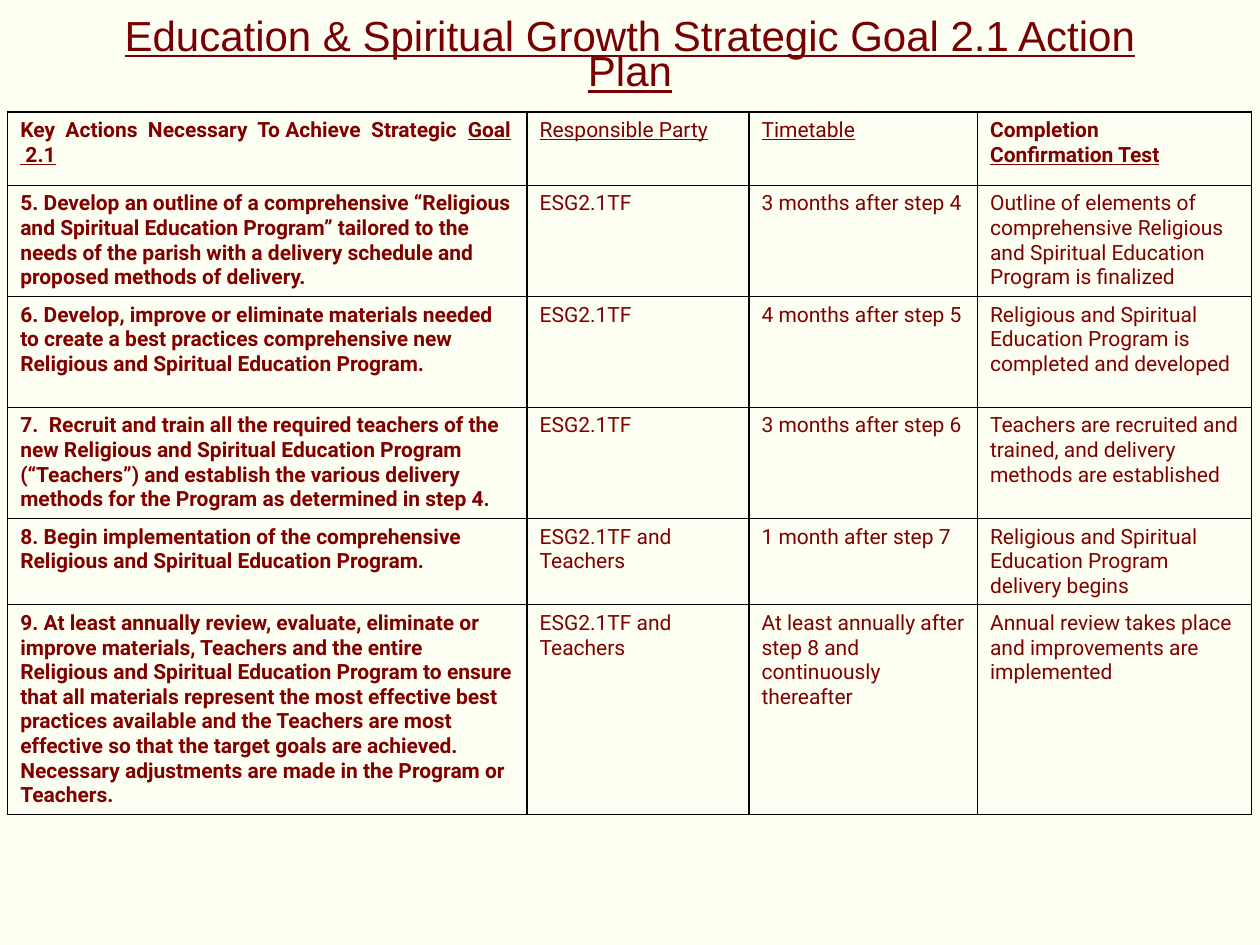
from lxml import etree
from pptx import Presentation
from pptx.dml import color
from pptx.enum import text
from pptx.oxml import ns
from pptx.util import Pt

PAPER, MAROON, TITLE_RED, BLACK = "FEFFF3", "800000", "760002", "000000"
COL_WIDTHS = [296.8, 126.8, 130.6, 156.8]
ROW_HEIGHTS = [41.8, 63.4, 63.4, 63.4, 49.4, 120]

HEADERS = [
    [[("Key  Actions  Necessary  To Achieve  Strategic  ", True, False),
      ("Goal  2.1", True, True)]],
    [[("Responsible Party", False, True)]],
    [[("Timetable", False, True)]],
    [[("Completion", True, False)], [("Confirmation Test", True, True)]],
]
ACTIONS = [
    ("5. Develop an outline of a comprehensive “Religious and Spiritual Education "
     "Program” tailored to the needs of the parish with a delivery schedule and "
     "proposed methods of delivery.",
     "ESG2.1TF", "3 months after step 4",
     "Outline of elements of comprehensive Religious and Spiritual Education "
     "Program is finalized"),
    ("6. Develop, improve or eliminate materials needed to create a best practices "
     "comprehensive new Religious and Spiritual Education Program.",
     "ESG2.1TF", "4 months after step 5",
     "Religious and Spiritual Education Program is completed and developed"),
    ("7.  Recruit and train all the required teachers of the new Religious and "
     "Spiritual Education Program (“Teachers”) and establish the various delivery "
     "methods for the Program as determined in step 4.",
     "ESG2.1TF", "3 months after step 6",
     "Teachers are recruited and trained, and delivery methods are established"),
    ("8. Begin implementation of the comprehensive Religious and Spiritual "
     "Education Program.",
     "ESG2.1TF and Teachers", "1 month after step 7",
     "Religious and Spiritual Education Program delivery begins"),
    ("9. At least annually review, evaluate, eliminate or improve materials, "
     "Teachers and the entire Religious and Spiritual Education Program to ensure "
     "that all materials represent the most effective best practices available and "
     "the Teachers are most effective so that the target goals are achieved. "
     "Necessary adjustments are made in the Program or Teachers.",
     "ESG2.1TF and Teachers",
     "At least annually after step 8 and continuously thereafter",
     "Annual review takes place and improvements are implemented"),
]


def rgb(value):
    return color.RGBColor.from_string(value)


def add_run(p, words, size=12, font="Roboto", fill=MAROON, bold=False, underline=False):
    r = p.add_run()
    r.text = words
    f = r.font
    f.size, f.name, f.bold, f.underline = Pt(size), font, bold, underline
    f.color.rgb = rgb(fill)


def add_borders(cell, width=0.75):
    tcPr = cell._tc.get_or_add_tcPr()
    for i, side in enumerate(("lnL", "lnR", "lnT", "lnB")):
        ln = etree.Element(ns.qn(f"a:{side}"), w=str(Pt(width)))
        solid = etree.SubElement(ln, ns.qn("a:solidFill"))
        etree.SubElement(solid, ns.qn("a:srgbClr"), val=BLACK)
        tcPr.insert(i, ln)


def fill_cell(cell, paragraphs):
    cell.fill.background()
    add_borders(cell)
    tf = cell.text_frame
    for i, runs in enumerate(paragraphs):
        p = tf.add_paragraph() if i else tf.paragraphs[0]
        for words, bold, underline in runs:
            add_run(p, words, bold=bold, underline=underline)


def add_action_table(s, left, top):
    rows = [HEADERS] + [
        [[[(words, c == 0, False)]] for c, words in enumerate(action)]
        for action in ACTIONS
    ]
    tbl = s.shapes.add_table(len(rows), len(COL_WIDTHS), Pt(left), Pt(top),
                             Pt(sum(COL_WIDTHS)), Pt(sum(ROW_HEIGHTS))).table
    tbl.first_row = tbl.horz_banding = False
    for col, width in zip(tbl.columns, COL_WIDTHS):
        col.width = Pt(width)
    for row, height, contents in zip(tbl.rows, ROW_HEIGHTS, rows):
        row.height = Pt(height)
        for cell, paragraphs in zip(row.cells, contents):
            fill_cell(cell, paragraphs)


def place_title(s, left, top, width, height):
    sp = s.shapes.title
    sp.left, sp.top, sp.width, sp.height = Pt(left), Pt(top), Pt(width), Pt(height)
    tf = sp.text_frame
    tf.word_wrap = True
    tf.auto_size = text.MSO_AUTO_SIZE.NONE
    tf.vertical_anchor = text.MSO_ANCHOR.MIDDLE
    p = tf.paragraphs[0]
    p.alignment = text.PP_ALIGN.CENTER
    p.line_spacing = 0.7
    add_run(p, "Education & Spiritual Growth Strategic Goal 2.1 Action Plan",
            size=24, font="Arial", fill=TITLE_RED, underline=True)
    s.shapes.element.append(sp.element)


def main():
    prs = Presentation()
    prs.slide_width, prs.slide_height = Pt(720), Pt(540)
    s = prs.slides.add_slide(prs.slide_layouts[5])
    s.background.fill.solid()
    s.background.fill.fore_color.rgb = rgb(PAPER)
    add_action_table(s, 4.4, 64)
    place_title(s, 47.5, -11.5, 625, 90)
    prs.save("out.pptx")


if __name__ == "__main__":
    main()
